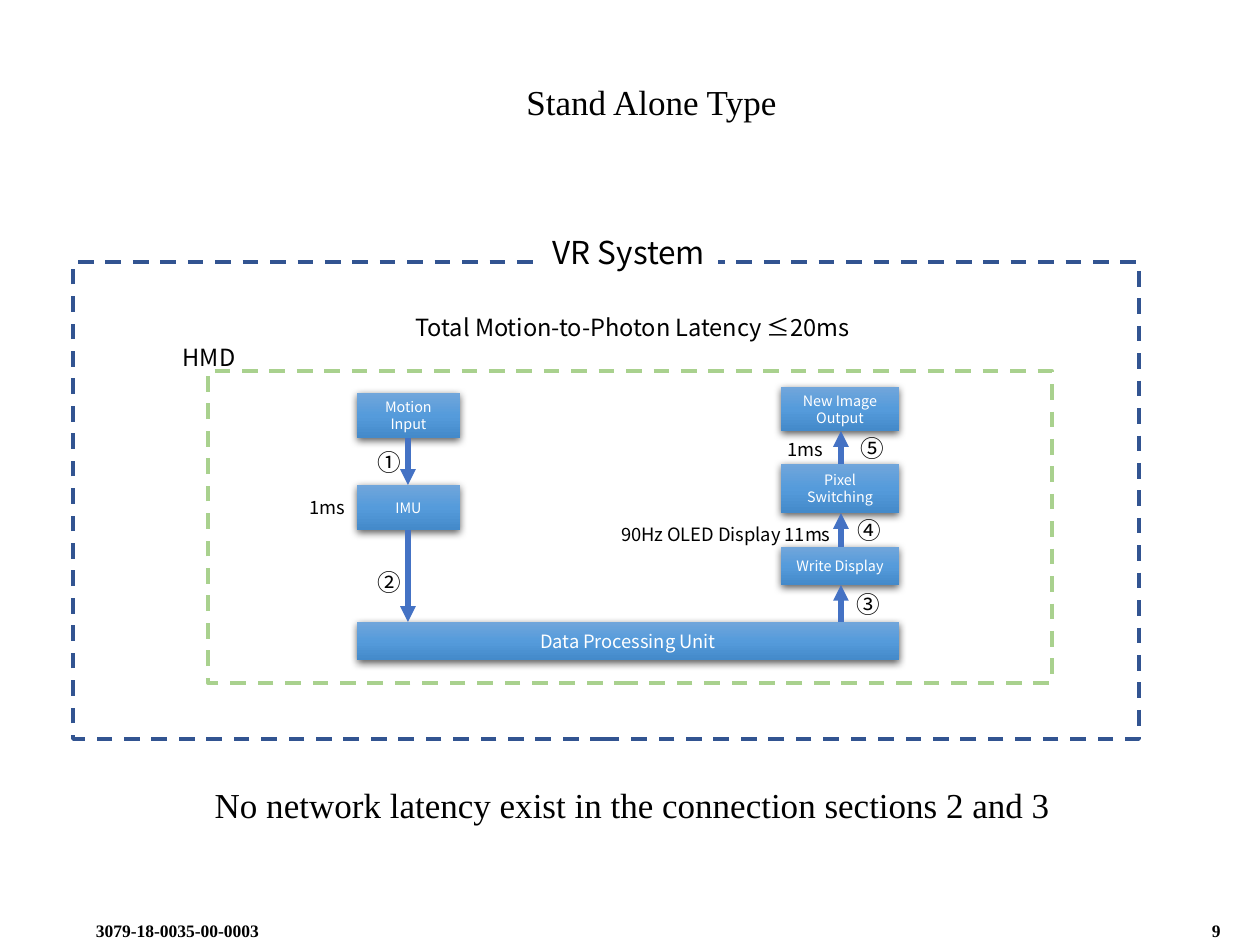
from lxml import etree
from pptx import Presentation
from pptx.dml.color import RGBColor
from pptx.enum import dml, shapes, text
from pptx.oxml import parse_xml
from pptx.oxml.ns import nsdecls, qn
from pptx.util import Emu, Pt

SANS, SERIF = "Noto Sans CJK KR", "Times New Roman"
BLUE, BLACK, WHITE = "4472C4", "000000", "FFFFFF"
STOPS = [(0, "71A6DB"), (50, "559BDB"), (100, "448ACA")]

BOXES = [
    (["Motion", "Input"], 357, 393, 103, 45, 8.2),
    (["IMU"], 357, 485, 103, 45, 8.2),
    (["Write Display"], 781, 547, 118, 38, 8.2),
    (["Pixel", "Switching"], 781, 464, 118, 49, 8.2),
    (["New Image", "Output"], 781, 387, 118, 44, 8.2),
    (["Data Processing Unit"], 357, 622, 542, 38, 10.5),
]
ARROWS = [
    (408, 438, 485),
    (408, 530, 622),
    (841, 622, 585),
    (841, 547, 513),
    (841, 464, 431),
]
FRAMES = [
    (208, 371, 844, 312, "A9D18E"),
    (73, 262, 1066, 477, "325491"),
]
STEPS = [("①", 365, 441), ("②", 365, 561), ("③", 844, 583), ("④", 845, 509), ("⑤", 848, 427)]
LABELS = [
    ("HMD", 168, 336, 82, 42, 13.5),
    ("Total Motion-to-Photon Latency ≤20ms", 349, 306, 567, 42, 13.5),
    ("1ms", 759, 432, 92, 35, 10.5),
    ("90Hz OLED Display 11ms", 607, 517, 238, 35, 10.5),
    ("1ms", 281, 490, 92, 35, 10.5),
] + [(mark, x, y, 49, 42, 13.5) for mark, x, y in STEPS]
HEADINGS = [
    ("Stand Alone Type", 513, 74, 277, 55),
    ("No network latency exist in the connection sections 2 and 3", 199, 777, 867, 55),
]
FOOTERS = [("3079-18-0035-00-0003", 84, 914, 662, 32), ("9", 1200, 914, 60, 32)]


def px(n):
    return Emu(round(n * 914400 / 126))


def rgb(value):
    return RGBColor.from_string(value)


def write(sp, lines, size, font=SANS, color=BLACK, bold=False, center=True, inset=9):
    tf = sp.text_frame
    tf.word_wrap = False
    tf.vertical_anchor = text.MSO_ANCHOR.MIDDLE
    tf.margin_left = tf.margin_right = px(inset)
    tf.margin_top = tf.margin_bottom = 0
    for i, line in enumerate(lines):
        p = tf.paragraphs[0] if i == 0 else tf.add_paragraph()
        p.text = line
        p.alignment = text.PP_ALIGN.CENTER if center else text.PP_ALIGN.LEFT
        p.font.size, p.font.name, p.font.bold = Pt(size), font, bold
        p.font.color.rgb = rgb(color)


def add_rect(x, y, w, h):
    sp = s.shapes.add_shape(shapes.MSO_SHAPE.RECTANGLE, px(x), px(y), px(w), px(h))
    sp.shadow.inherit = False
    sp.fill.background()
    sp.line.fill.background()
    return sp


def add_box(lines, x, y, w, h, size):
    sp = add_rect(x, y, w, h)
    sp.fill.gradient()
    sp.fill.gradient_angle = 270
    stops = sp._element.spPr.find(".//" + qn("a:gsLst"))
    for stop in list(stops):
        stops.remove(stop)
    for pos, color in STOPS:
        stops.append(parse_xml(
            f'<a:gs {nsdecls("a")} pos="{pos * 1000}"><a:srgbClr val="{color}"/></a:gs>'))
    sp._element.spPr.find(qn("a:effectLst")).append(parse_xml(
        f'<a:outerShdw {nsdecls("a")} blurRad="{Pt(4.5)}" dist="{Pt(1.5)}" dir="5400000" '
        'algn="ctr" rotWithShape="0"><a:srgbClr val="000000"><a:alpha val="63000"/>'
        '</a:srgbClr></a:outerShdw>'))
    write(sp, lines, size, color=WHITE, inset=0)


def add_arrow(x, start, end):
    c = s.shapes.add_connector(shapes.MSO_CONNECTOR.STRAIGHT, px(x), px(start), px(x), px(end))
    c.line.color.rgb = rgb(BLUE)
    c.line.width = Pt(3)
    etree.SubElement(c.line._get_or_add_ln(), qn("a:tailEnd"), type="triangle")
    etree.SubElement(c._element.spPr, qn("a:effectLst"))


def add_label(line, x, y, w, h, size, **style):
    write(s.shapes.add_textbox(px(x), px(y), px(w), px(h)), [line], size, **style)


prs = Presentation()
prs.slide_width, prs.slide_height = px(1260), px(945)
s = prs.slides.add_slide(prs.slide_layouts[6])

for box in BOXES:
    add_box(*box)
for arrow in ARROWS:
    add_arrow(*arrow)
for x, y, w, h, color in FRAMES:
    frame = add_rect(x, y, w, h)
    frame.line.color.rgb = rgb(color)
    frame.line.width = Pt(2.25)
    frame.line.dash_style = dml.MSO_LINE.DASH

caption = add_rect(540, 227, 178, 50)
caption.fill.solid()
caption.fill.fore_color.rgb = rgb(WHITE)
write(caption, ["VR System"], 18)

for label in LABELS:
    add_label(*label)
for heading in HEADINGS:
    add_label(*heading, 20, font=SERIF)
for footer in FOOTERS:
    add_label(*footer, 10, font=SERIF, bold=True, center=False, inset=12)

prs.save("out.pptx")
